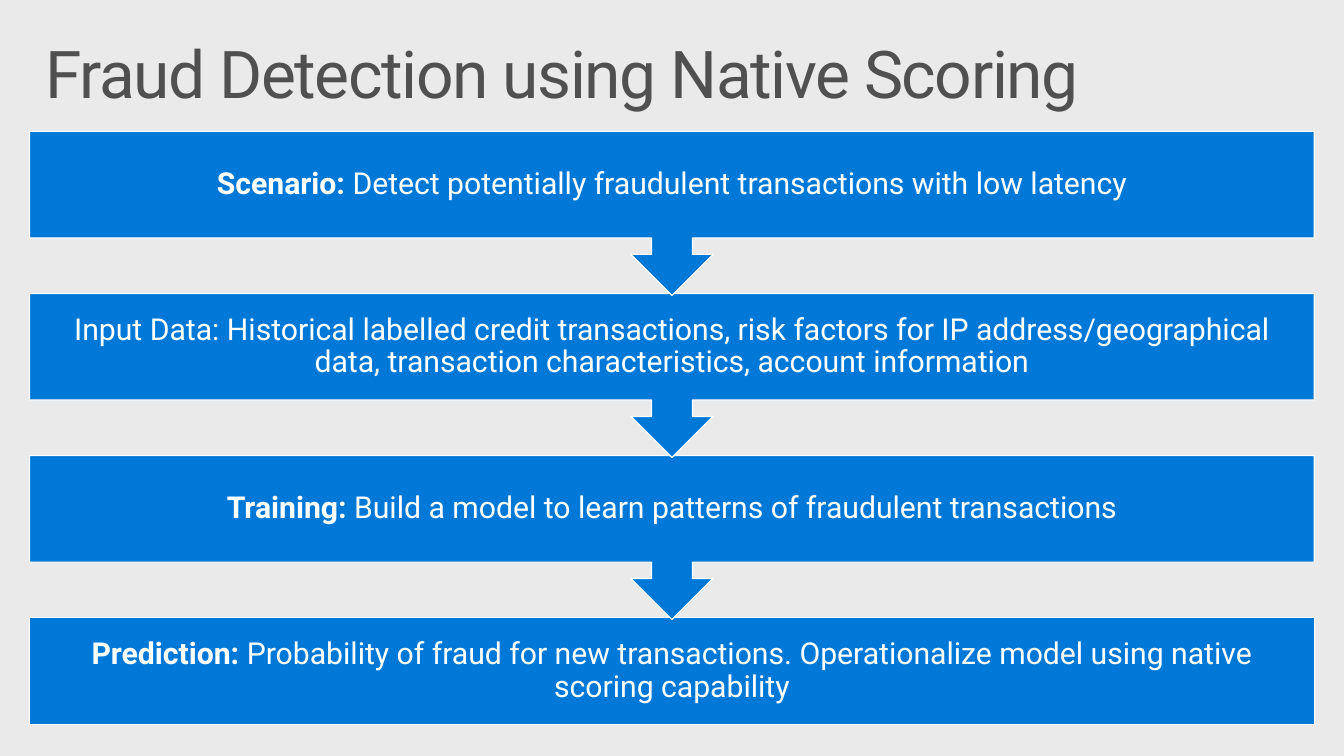
from pptx import Presentation
from pptx.dml.color import RGBColor
from pptx.enum.shapes import MSO_SHAPE
from pptx.enum.text import MSO_ANCHOR, MSO_AUTO_SIZE, PP_ALIGN
from pptx.util import Inches, Pt

COLS, ROWS = 1360, 765
LEFT, WIDTH = 30, 1300
FIRST_ROW, PITCH = 133, 164
BOX_HEIGHT, CALLOUT_HEIGHT = 108, 166

STEPS = [
    ("Scenario:", " Detect potentially fraudulent transactions with low latency"),
    ("", "Input Data: Historical labelled credit transactions, risk factors for "
         "IP address/geographical data, transaction characteristics, account information"),
    ("Training:", " Build a model to learn patterns of fraudulent transactions"),
    ("Prediction:", " Probability of fraud for new transactions. "
                    "Operationalize model using native scoring capability"),
]


def rgb(value):
    return RGBColor.from_string(value)


def apply(target, values):
    for name, value in values.items():
        setattr(target, name, value)


class SlideBuilder:
    font = "Roboto"
    background, title_color = "EAEAEA", "505050"
    fill, line, text_color = "0078D7", "FFFFFF", "FFFFFF"

    def __init__(self, prs):
        self.prs = prs
        self.slide = prs.slides.add_slide(prs.slide_layouts[5])
        bg = self.slide.background.fill
        bg.solid()
        bg.fore_color.rgb = rgb(self.background)

    def grid(self, col, row, cols, rows):
        """Turn grid columns and rows into left, top, width and height."""
        x, y = self.prs.slide_width / COLS, self.prs.slide_height / ROWS
        return [round(n) for n in (col * x, row * y, cols * x, rows * y)]

    def frame(self, sp, anchor, side, top):
        tf = sp.text_frame
        apply(tf, {
            "word_wrap": True, "auto_size": MSO_AUTO_SIZE.NONE,
            "vertical_anchor": anchor,
            "margin_left": Inches(side), "margin_right": Inches(side),
            "margin_top": Inches(top), "margin_bottom": Inches(top),
        })
        return tf.paragraphs[0]

    def run(self, p, text, size, color, bold=False):
        r = p.add_run()
        r.text = text
        apply(r.font, {"name": self.font, "size": Pt(size), "bold": bold})
        r.font.color.rgb = rgb(color)
        return r

    def title(self, text, *cells):
        sp = self.slide.shapes.title
        apply(sp, dict(zip(("left", "top", "width", "height"), self.grid(*cells))))
        p = self.frame(sp, MSO_ANCHOR.TOP, 0.16, 0.1)
        apply(p, {"alignment": PP_ALIGN.LEFT, "line_spacing": 0.9})
        r = self.run(p, text, 48, self.title_color)
        r.font._element.set("spc", "-100")

    def step(self, kind, label, text, *cells):
        sp = self.slide.shapes.add_shape(kind, *self.grid(*cells))
        sp.shadow.inherit = False
        sp.fill.solid()
        sp.fill.fore_color.rgb = rgb(self.fill)
        sp.line.color.rgb = rgb(self.line)
        sp.line.width = Pt(0.85)
        p = self.frame(sp, MSO_ANCHOR.MIDDLE, 0.17, 0.17)
        apply(p, {"alignment": PP_ALIGN.CENTER, "line_spacing": 0.9})
        if label:
            self.run(p, label, 22, self.text_color, bold=True)
        self.run(p, text, 22, self.text_color)


def main():
    prs = Presentation()
    apply(prs, {"slide_width": Inches(13.6), "slide_height": Inches(7.65)})
    s = SlideBuilder(prs)
    s.title("Fraud Detection using Native Scoring", LEFT, 32, WIDTH, 100)
    last = len(STEPS) - 1
    # Bottom step first, so that each arrow tip lies over the step below it.
    for i in range(last, -1, -1):
        kind, height = ((MSO_SHAPE.RECTANGLE, BOX_HEIGHT) if i == last
                        else (MSO_SHAPE.DOWN_ARROW_CALLOUT, CALLOUT_HEIGHT))
        s.step(kind, *STEPS[i], LEFT, FIRST_ROW + i * PITCH, WIDTH, height)
    prs.save("out.pptx")


if __name__ == "__main__":
    main()
